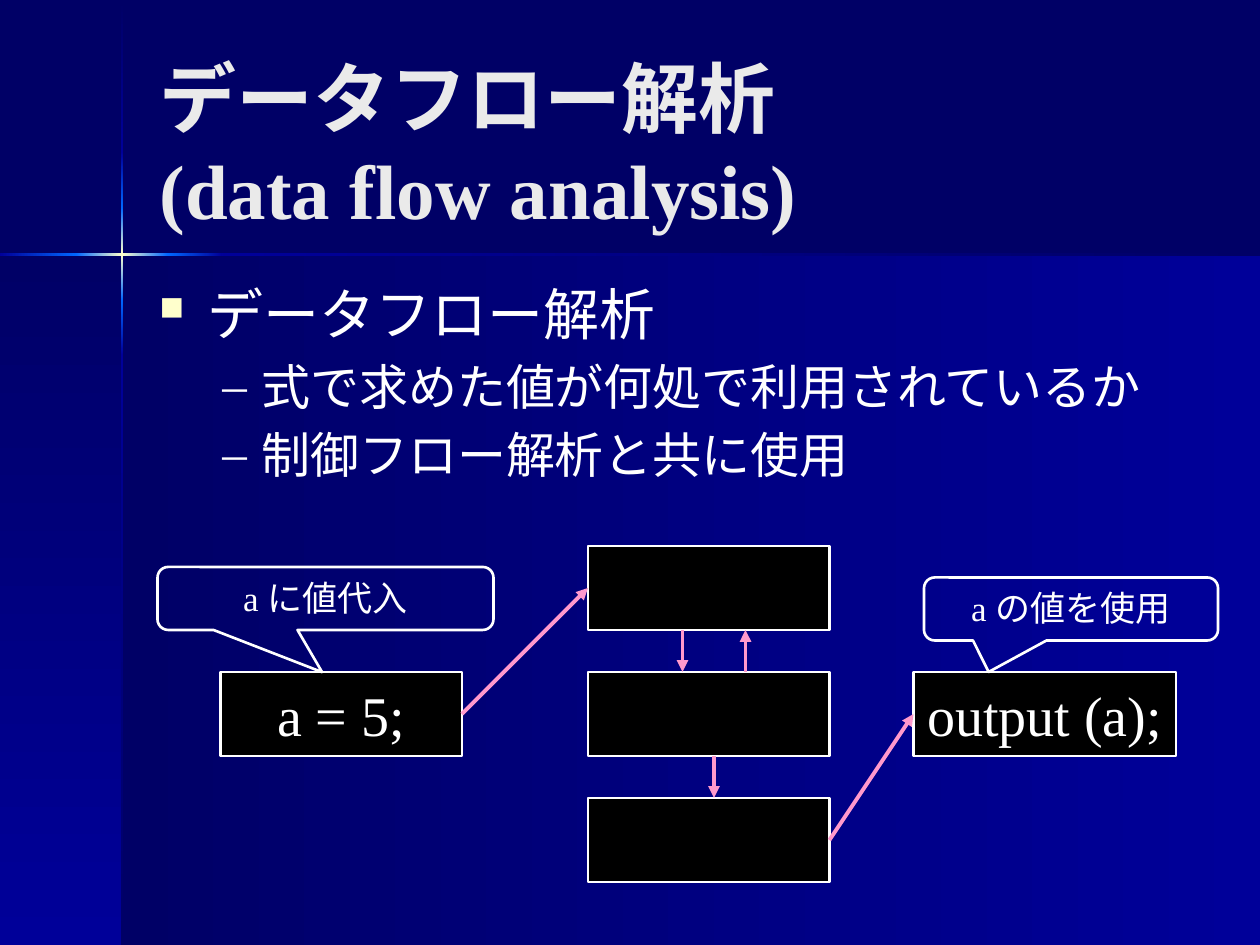
from lxml.etree import SubElement
from pptx import Presentation
from pptx.dml.color import RGBColor
from pptx.enum.shapes import MSO_CONNECTOR, MSO_SHAPE
from pptx.enum.text import MSO_ANCHOR, PP_ALIGN
from pptx.oxml.ns import qn
from pptx.util import Inches, Pt

COLORS = {
    "night": "000066", "blue": "000099", "glow": "0066FF", "spark": "FFFFCC",
    "heading": "EAEAEA", "white": "FFFFFF", "black": "000000", "arrow": "FF99CC",
}
FONT = "Times New Roman"
COLUMNS, ROWS = 120, 90
CELL = Inches(10) / COLUMNS
BAR = 0.24


def color(name):
    return RGBColor.from_string(COLORS[name])


def cells(*values):
    return [round(value * CELL) for value in values]


def style_text(para, size, name="white", bold=False):
    para.font.name = FONT
    para.font.size = Pt(size)
    para.font.bold = bold
    para.font.color.rgb = color(name)


def add_gradient(page, box, names, angle):
    shape = page.shapes.add_shape(MSO_SHAPE.RECTANGLE, *cells(*box))
    shape.shadow.inherit = False
    shape.line.fill.background()
    shape.fill.gradient()
    shape.fill.gradient_angle = -angle % 360
    stops = shape.element.spPr.find(qn("a:gradFill")).find(qn("a:gsLst"))
    for stop in list(stops):
        stops.remove(stop)
    for index, name in enumerate(names):
        position = index * 100000 // (len(names) - 1)
        stop = SubElement(stops, qn("a:gs"), pos=str(position))
        SubElement(stop, qn("a:srgbClr"), val=COLORS[name])


def draw_backdrop(page, box):
    left, top, width, height = box
    cross_x, cross_y = left + 11.62, top + 24.24
    lower = top + height - cross_y
    add_gradient(page, (cross_x, cross_y, left + width - cross_x, lower),
                 ("night", "blue"), 0)
    add_gradient(page, (left, cross_y, cross_x - left, lower), ("night", "blue"), 90)
    fades = [("night", "blue"), ("blue", "glow"), ("glow", "spark", "glow"),
             ("glow", "blue"), ("blue", "night")]
    rows = [0, 14.5, 19.8, 28.6, 33.8, height]
    for start, end, names in zip(rows, rows[1:], fades):
        add_gradient(page, (cross_x - BAR / 2, top + start, BAR, end - start), names, 90)
    columns = [0, 7.25, 16, 21.2, width]
    for start, end, names in zip(columns, columns[1:], fades[1:]):
        add_gradient(page, (left + start, cross_y - BAR / 2, end - start, BAR), names, 0)


def draw_heading(page, box, text):
    frame = page.shapes.add_textbox(*cells(*box)).text_frame
    frame.word_wrap = True
    frame.vertical_anchor = MSO_ANCHOR.BOTTOM
    frame.text = text
    style_text(frame.paragraphs[0], 44, "heading", True)


def add_bullet(para, margin, hanging, mark, name, font, share):
    props = para._p.get_or_add_pPr()
    props.set("marL", str(Inches(margin)))
    props.set("indent", str(-Inches(hanging)))
    tint = SubElement(props, qn("a:buClr"))
    SubElement(tint, qn("a:srgbClr"), val=COLORS[name])
    SubElement(props, qn("a:buSzPct"), val=str(share * 1000))
    SubElement(props, qn("a:buFont"), typeface=font)
    SubElement(props, qn("a:buChar"), char=mark)


def draw_points(page, box, topic, details):
    frame = page.shapes.add_textbox(*cells(*box)).text_frame
    frame.word_wrap = True
    for index, text in enumerate([topic, *details]):
        para = frame.add_paragraph() if index else frame.paragraphs[0]
        para.text = text
        size = 28 if index else 32
        para.space_before = Pt(size * 0.2)
        if index:
            para.level = 1
            add_bullet(para, 0.81, 0.31, "–", "white", FONT, 100)
        else:
            add_bullet(para, 0.38, 0.38, "n", "spark", "Wingdings", 60)
        style_text(para, size)


def add_outlined(page, kind, box, text="", size=32):
    shape = page.shapes.add_shape(kind, *cells(*box))
    shape.shadow.inherit = False
    shape.line.color.rgb = color("white")
    shape.line.width = Pt(1.5)
    if text:
        shape.text_frame.text = text
        para = shape.text_frame.paragraphs[0]
        para.alignment = PP_ALIGN.CENTER
        style_text(para, size)
    return shape


def add_block(page, box, text=""):
    shape = add_outlined(page, MSO_SHAPE.RECTANGLE, box, text)
    shape.fill.solid()
    shape.fill.fore_color.rgb = color("black")
    shape.text_frame.word_wrap = False


def add_callout(page, box, text, tip):
    shape = add_outlined(page, MSO_SHAPE.ROUNDED_RECTANGULAR_CALLOUT, box, text, 20)
    shape.fill.background()
    shape.text_frame.vertical_anchor = MSO_ANCHOR.TOP
    for index, value in enumerate((*tip, 0.17)):
        shape.adjustments[index] = value


def add_arrow(page, start, end):
    arrow = page.shapes.add_connector(MSO_CONNECTOR.STRAIGHT, *cells(*start, *end))
    arrow.line.color.rgb = color("arrow")
    arrow.line.width = Pt(2.25)
    SubElement(arrow.line._get_or_add_ln(), qn("a:tailEnd"), type="triangle")
    SubElement(arrow.element.spPr, qn("a:effectLst"))


def draw_flow(page, box):
    left, top, width, height = box
    block_width, block_height = 23, 8
    step = (height - block_height) / 2
    middle = top + step

    def at(column, row):
        return left + column, top + row

    for index in range(3):
        add_block(page, (left + 41, top + index * step, block_width, block_height))
    add_block(page, (left + 6, middle, block_width, block_height), "a = 5;")
    add_block(page, (left + 72, middle, 25, block_height), "output (a);")
    add_callout(page, (*at(0, 2), 32, 6), "a に値代入", (-0.01, 1.17))
    add_callout(page, (*at(width - 28, 3), 28, 6), "a の値を使用", (-0.28, 1))

    center = block_height / 2
    arrows = [
        ((29, step + center), (41, center)),
        ((50, block_height), (50, step)),
        ((56, step), (56, block_height)),
        ((53, step + block_height), (53, 2 * step)),
        ((64, 2 * step + center), (72, step + center)),
    ]
    for start, end in arrows:
        add_arrow(page, at(*start), at(*end))


def main():
    deck = Presentation()
    deck.slide_width, deck.slide_height = cells(COLUMNS, ROWS)
    page = deck.slides.add_slide(deck.slide_layouts[6])
    page.background.fill.solid()
    page.background.fill.fore_color.rgb = color("night")
    draw_backdrop(page, (0, 0, COLUMNS, ROWS))
    draw_heading(page, (14, 4, 93, 19), "データフロー解析\v(data flow analysis)")
    draw_points(page, (14, 26, 100, 23), "データフロー解析",
                ["式で求めた値が何処で利用されているか", "制御フロー解析と共に使用"])
    draw_flow(page, (15, 52, 101, 32))
    deck.save("out.pptx")


if __name__ == "__main__":
    main()
